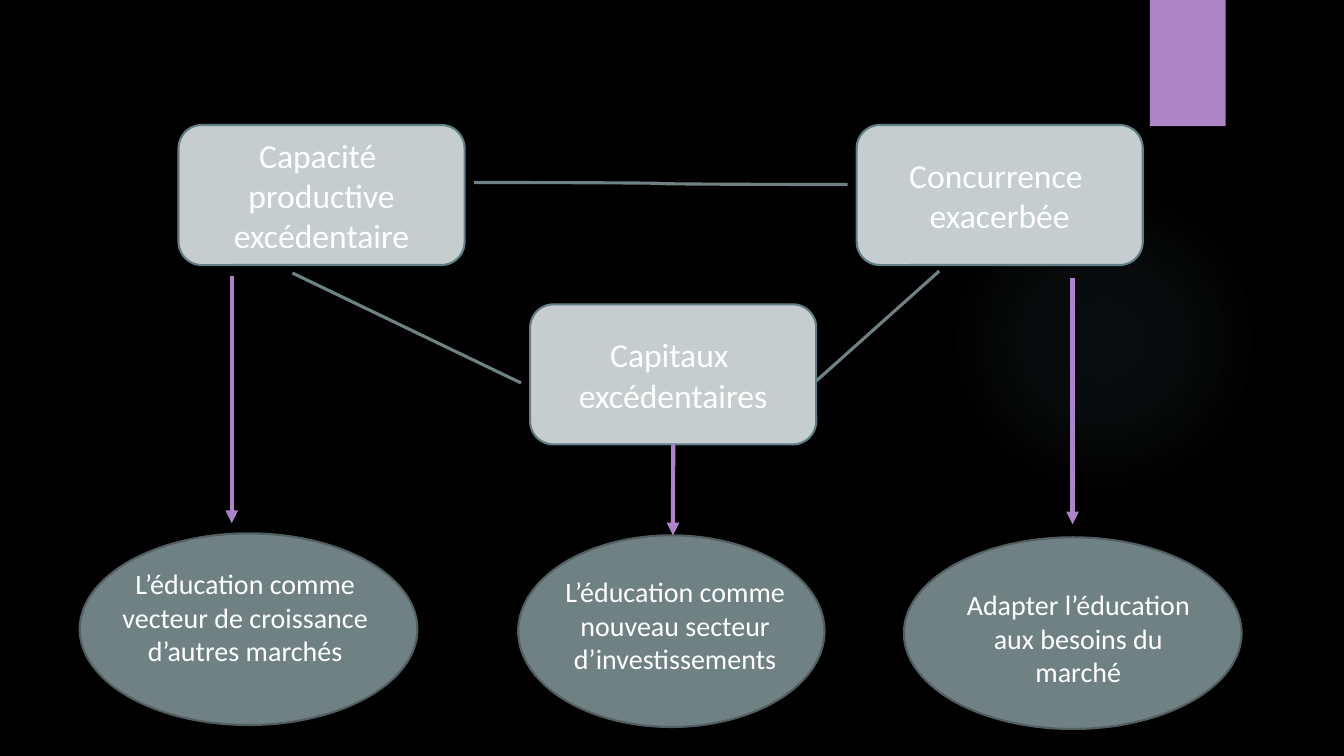
"""Build a slide linking surplus capacity, capital and competition to education."""
from lxml import etree
from pptx import Presentation
from pptx.dml.color import RGBColor
from pptx.enum.shapes import MSO_CONNECTOR as Link, MSO_SHAPE as Shape
from pptx.enum.text import MSO_ANCHOR as Anchor, MSO_AUTO_SIZE as AutoSize, PP_ALIGN as Align
from pptx.oxml.ns import qn
from pptx.util import Cm, Pt

COLORS = {
    "background": "000000",
    "glow": "84ACB6",
    "accent": "AD84C6",
    "box": "C5CDCE",
    "box line": "627F87",
    "oval": "6F8183",
    "oval line": "525F61",
    "text": "FFFFFF",
}


def add_filled(kind, place, fill, line=None):
    shape = page.shapes.add_shape(kind, *[Cm(length) for length in place])
    shape.shadow.inherit = False
    shape.fill.solid()
    shape.fill.fore_color.rgb = RGBColor.from_string(COLORS[fill])
    if line:
        shape.line.color.rgb = RGBColor.from_string(COLORS[line])
        shape.line.width = Pt(1.5)
    else:
        shape.line.fill.background()
    return shape


def write_lines(frame, lines, size):
    frame.word_wrap = True
    for index, line in enumerate(lines):
        para = frame.paragraphs[0] if index == 0 else frame.add_paragraph()
        para.alignment = Align.CENTER
        span = para.add_run()
        span.text = line
        span.font.name = "Calibri"
        span.font.size = Pt(size)
        span.font.color.rgb = RGBColor.from_string(COLORS["text"])


deck = Presentation()
deck.slide_width, deck.slide_height = Cm(33.87), Cm(19.05)
page = deck.slides.add_slide(deck.slide_layouts[6])
page.background.fill.solid()
page.background.fill.fore_color.rgb = RGBColor.from_string(COLORS["background"])

glow = add_filled(Shape.OVAL, (23.9, 4.65, 7.82, 7.82), "glow")
properties = glow._element.spPr
gradient = etree.Element(qn("a:gradFill"))
stops = etree.SubElement(gradient, qn("a:gsLst"))
for position, opacity in ((0, 7), (36, 6), (69, 0)):
    stop = etree.SubElement(stops, qn("a:gs"), pos=str(position * 1000))
    color = etree.SubElement(stop, qn("a:srgbClr"), val=COLORS["glow"])
    etree.SubElement(color, qn("a:alpha"), val=str(opacity * 1000))
circle = etree.SubElement(gradient, qn("a:path"), path="circle")
etree.SubElement(circle, qn("a:fillToRect"), l="50000", t="50000", r="50000", b="50000")
properties.replace(properties.find(qn("a:solidFill")), gradient)

add_filled(Shape.RECTANGLE, (28.98, 0, 1.91, 3.18), "accent")

boxes = {}
for name, left, top, lines in (
    ("capital", 13.36, 7.67, ["Capitaux ", "excédentaires"]),
    ("competition", 21.59, 3.15, ["Concurrence ", "exacerbée"]),
    ("capacity", 4.5, 3.15, ["Capacité ", "productive", "excédentaire"]),
):
    box = add_filled(Shape.ROUNDED_RECTANGLE, (left, top, 7.21, 3.53), "box", "box line")
    box.text_frame.vertical_anchor = Anchor.MIDDLE
    write_lines(box.text_frame, lines, 24)
    boxes[name] = box

for place, text_place, text in (
    ((2.01, 13.44, 8.51, 4.83), (2.74, 14.15, 6.88, 2.82),
     "L’éducation comme vecteur de croissance d’autres marchés"),
    ((13.06, 13.49, 7.72, 4.83), (13.46, 14.35, 7.11, 2.82),
     "L’éducation comme nouveau secteur d’investissements"),
    ((22.78, 13.54, 8.51, 4.83), (23.67, 14.68, 7.01, 2.82),
     "Adapter l’éducation aux besoins du marché"),
):
    add_filled(Shape.OVAL, place, "oval", "oval line")
    caption = page.shapes.add_textbox(*[Cm(length) for length in text_place])
    write_lines(caption.text_frame, [text], 20)
    caption.text_frame.auto_size = AutoSize.SHAPE_TO_FIT_TEXT

for kind, ends, color, width, source in (
    (Link.CURVE, (11.94, 4.6, 21.36, 4.65), "oval", 2.25, None),
    (Link.STRAIGHT, (7.37, 6.88, 13.13, 9.65), "oval", 2.25, None),
    (Link.STRAIGHT, (20.57, 9.6, 23.67, 6.83), "oval", 2.25, None),
    (Link.STRAIGHT, (5.84, 6.96, 5.84, 13.18), "accent", 3, None),
    (Link.STRAIGHT, (16.96, 11.2, 16.96, 13.49), "accent", 3, "capital"),
    (Link.STRAIGHT, (27.03, 7.01, 27.03, 13.21), "accent", 3, None),
):
    connector = page.shapes.add_connector(kind, *[Cm(length) for length in ends])
    connector.line.color.rgb = RGBColor.from_string(COLORS[color])
    connector.line.width = Pt(width)
    if color == "accent":
        etree.SubElement(connector.line._get_or_add_ln(), qn("a:tailEnd"), type="triangle")
    etree.SubElement(connector._element.spPr, qn("a:effectLst"))
    if source:
        connector.begin_connect(boxes[source], 2)

deck.save("out.pptx")
